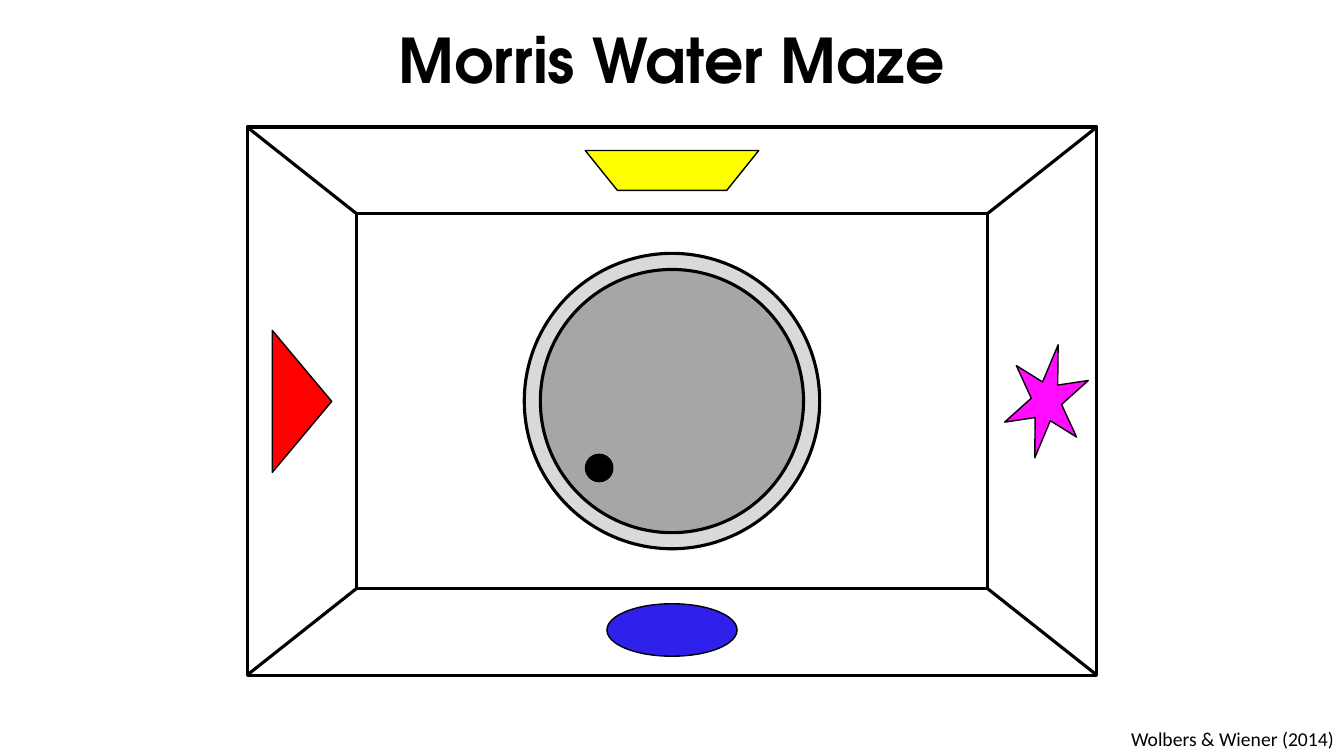
"""Build the Morris Water Maze slide: a room with four wall cues around a pool."""
import dataclasses
import itertools

import pptx
import pptx.dml.color
import pptx.enum.shapes
import pptx.enum.text
import pptx.oxml
import pptx.util

Pt = pptx.util.Pt
SHAPE = pptx.enum.shapes.MSO_SHAPE
ALIGN = pptx.enum.text.PP_ALIGN
ANCHOR = pptx.enum.text.MSO_ANCHOR
AUTO_SIZE = pptx.enum.text.MSO_AUTO_SIZE


@dataclasses.dataclass(frozen=True)
class Theme:
    ink: str = "000000"
    paper: str = "FFFFFF"
    rim: str = "D9D9D9"
    water: str = "A6A6A6"
    yellow: str = "FFFF00"
    red: str = "FF0000"
    blue: str = "2F20EC"
    magenta: str = "FF0DFF"
    title_font: str = "TeX Gyre Adventor"
    body_font: str = "Calibri"
    title_size: float = 44
    credit_size: float = 14
    wall_line: float = 2.25
    cue_line: float = 1


THEME = Theme()
SLIDE_SIZE = (960, 540)
CENTER = (480, 286.5)
ROOM_SIZE = (607, 391.5)
FLOOR_SIZE = (451, 268)


def color(code):
    return pptx.dml.color.RGBColor.from_string(code)


def apply_format(target, values):
    for name, value in values.items():
        setattr(target, name, value)


def style_line(line, weight):
    line.color.rgb = color(THEME.ink)
    line.width = Pt(weight)


def add_figure(group, kind, center, size, fill, weight, rotation=0, adjustment=None):
    left, top = (middle - extent / 2 for middle, extent in zip(center, size))
    shape = group.shapes.add_shape(kind, Pt(left), Pt(top), Pt(size[0]), Pt(size[1]))
    shape.shadow.inherit = False
    shape.fill.solid()
    shape.fill.fore_color.rgb = color(fill)
    style_line(shape.line, weight)
    shape.rotation = rotation
    if adjustment is not None:
        shape.adjustments[0] = adjustment
    return shape


def add_edge(group, start, end):
    points = [Pt(value) for value in (*start, *end)]
    edge = group.shapes.add_connector(pptx.enum.shapes.MSO_CONNECTOR.STRAIGHT, *points)
    style_line(edge.line, THEME.wall_line)
    edge.element.spPr.append(pptx.oxml.parse_xml(
        '<a:effectLst xmlns:a="http://schemas.openxmlformats.org/drawingml/2006/main"/>'))


def corner(size, signs):
    return [middle + sign * extent / 2
            for middle, extent, sign in zip(CENTER, size, signs)]


def add_room(group):
    for size in (ROOM_SIZE, FLOOR_SIZE):
        add_figure(group, SHAPE.RECTANGLE, CENTER, size, THEME.paper, THEME.wall_line)
    for signs in itertools.product((-1, 1), repeat=2):
        add_edge(group, corner(FLOOR_SIZE, signs), corner(ROOM_SIZE, signs))


def add_cues(group):
    cues = (
        (SHAPE.TRAPEZOID, (480, 121.7), (124, 28.5), THEME.yellow, 180, 0.804),
        (SHAPE.ISOSCELES_TRIANGLE, (215.7, 286.7), (101.5, 42.5), THEME.red, 90, None),
        (SHAPE.OVAL, (480, 450), (93, 37.5), THEME.blue, 0, None),
        (SHAPE.STAR_6_POINT, (747.5, 286.7), (52.5, 82.5), THEME.magenta, 11.7, 0.182),
    )
    for kind, center, size, fill, rotation, adjustment in cues:
        add_figure(group, kind, center, size, fill, THEME.cue_line, rotation, adjustment)


def add_pool(group):
    circles = (
        (CENTER, 211, THEME.rim, THEME.wall_line),
        (CENTER, 188, THEME.water, THEME.wall_line),
        ((428, 334.3), 19.5, THEME.ink, THEME.cue_line),
    )
    for center, diameter, fill, weight in circles:
        add_figure(group, SHAPE.OVAL, center, (diameter, diameter), fill, weight)


def write_text(shape, text, box, frame_format, paragraph_format, font_format):
    edges = (Pt(value) for value in box)
    apply_format(shape, dict(zip(("left", "top", "width", "height"), edges)))
    frame = shape.text_frame
    apply_format(frame, {"word_wrap": True, **frame_format})
    paragraph = frame.paragraphs[0]
    apply_format(paragraph, paragraph_format)
    run = paragraph.add_run()
    run.text = text
    apply_format(run.font, font_format)
    run.font.color.rgb = color(THEME.ink)


def main():
    presentation = pptx.Presentation()
    width, height = SLIDE_SIZE
    apply_format(presentation, {"slide_width": Pt(width), "slide_height": Pt(height)})
    slide = presentation.slides.add_slide(presentation.slide_layouts[5])

    maze = slide.shapes.add_group_shape()
    add_room(maze)
    add_cues(maze)
    add_pool(maze)

    write_text(
        slide.shapes.title, "Morris Water Maze", (0, 0.7, width, 90),
        {"vertical_anchor": ANCHOR.MIDDLE, "auto_size": AUTO_SIZE.NONE},
        {"alignment": ALIGN.CENTER, "line_spacing": 0.9},
        {"name": THEME.title_font, "size": Pt(THEME.title_size), "bold": True})
    credit_box = (546, 516, 414, 24)
    credit = slide.shapes.add_textbox(*(Pt(value) for value in credit_box))
    write_text(
        credit, "Wolbers & Wiener (2014)", credit_box,
        {"auto_size": AUTO_SIZE.SHAPE_TO_FIT_TEXT},
        {"alignment": ALIGN.RIGHT},
        {"name": THEME.body_font, "size": Pt(THEME.credit_size)})
    presentation.save("out.pptx")


if __name__ == "__main__":
    main()
